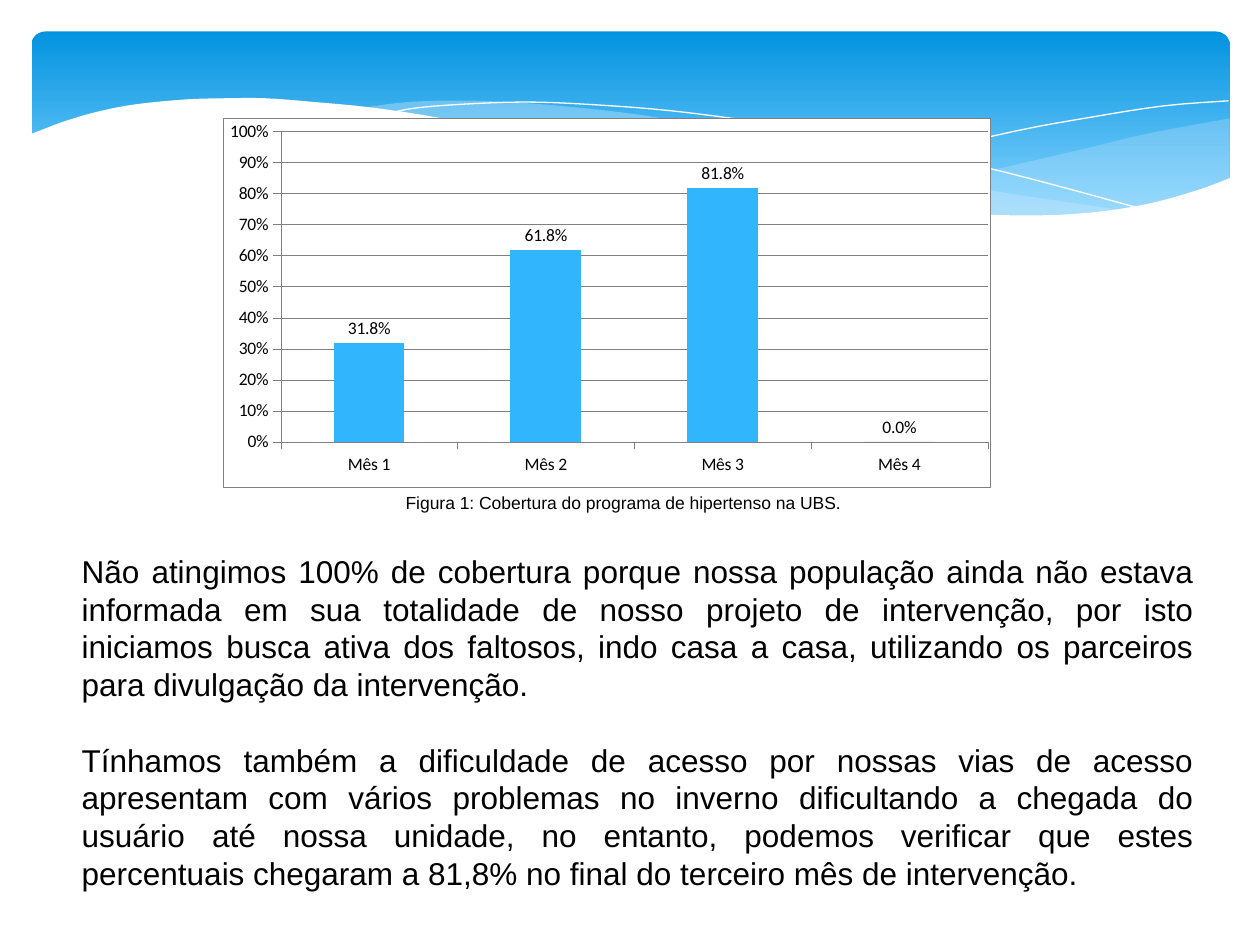
from lxml.etree import SubElement
from pptx import Presentation
from pptx.chart.data import CategoryChartData
from pptx.dml.color import RGBColor
from pptx.enum.chart import XL_CHART_TYPE, XL_LABEL_POSITION, XL_TICK_MARK
from pptx.enum.shapes import MSO_SHAPE
from pptx.enum.text import MSO_ANCHOR, PP_ALIGN
from pptx.oxml import parse_xml
from pptx.oxml.ns import nsdecls, qn
from pptx.util import Inches, Pt

WHITE, BLACK, GRAY, PALE = "FFFFFF", "000000", "808080", "C6E7FC"

RIGHT_WAVE = [
    [(9.76, 0.94), (9.48, 0.99), (9.06, 1.07), (8.61, 1.18), (8.05, 1.31),
     (7.53, 1.43), (7.06, 1.52), (6.61, 1.6)],
    [(6.61, 1.6), (7.05, 1.65), (7.45, 1.69), (7.81, 1.72), (8.24, 1.72),
     (8.63, 1.7), (8.97, 1.65), (9.35, 1.56), (9.63, 1.47), (9.76, 1.41)],
]
MIDDLE_WAVE = [
    [(8.93, 1.67), (8.37, 1.59), (7.75, 1.49), (7.06, 1.34), (6.29, 1.16),
     (5.69, 1.02), (5.14, 0.92), (4.65, 0.86), (4.2, 0.82), (3.8, 0.8),
     (3.44, 0.8), (3.13, 0.82), (2.86, 0.86)],
    [(2.86, 0.86), (3.42, 0.94), (4.04, 1.06), (4.49, 1.16), (5.3, 1.35),
     (6.01, 1.5), (6.65, 1.61), (7.22, 1.68), (7.73, 1.72), (8.18, 1.73),
     (8.57, 1.71), (8.93, 1.67)],
]
LONG_LINE = [
    [(3.09, 0.9), (3.28, 0.86), (3.63, 0.83), (4.16, 0.81), (4.69, 0.83),
     (5.33, 0.88), (6.08, 0.98), (6.95, 1.14), (7.95, 1.36), (9.07, 1.66)],
]
SHORT_LINE = [
    [(6.13, 1.51), (6.53, 1.41), (7.2, 1.24), (8.06, 1.04), (8.66, 0.93),
     (9.24, 0.84), (9.75, 0.8)],
]
WHITE_WAVE = [
    [(9.77, 1.41), (9.5, 1.51), (9.1, 1.62), (8.63, 1.69), (8.09, 1.71),
     (7.44, 1.68), (6.68, 1.6), (6.03, 1.49), (5.29, 1.33), (4.47, 1.14),
     (3.91, 1.02), (3.4, 0.92), (2.92, 0.85), (2.5, 0.81), (2.11, 0.78),
     (1.77, 0.78), (1.46, 0.79), (1.06, 0.83), (0.76, 0.89), (0.52, 0.96),
     (0.36, 1.02), (0.23, 1.07)],
    [(0.23, 2.24), (9.77, 2.24)],
]

CAPTION = "Figura 1: Cobertura do programa de hipertenso na UBS."
BODY = [
    "Não atingimos 100% de cobertura porque nossa população ainda não estava "
    "informada em sua totalidade de nosso projeto de intervenção, por isto "
    "iniciamos busca ativa dos faltosos, indo casa a casa, utilizando os "
    "parceiros para divulgação da intervenção.",
    "Tínhamos também a dificuldade de acesso por nossas vias de acesso "
    "apresentam com vários problemas no inverno dificultando a chegada do "
    "usuário até nossa unidade, no entanto, podemos verificar que estes "
    "percentuais chegaram a 81,8% no final do terceiro mês de intervenção.",
]


def rgb(value):
    return RGBColor.from_string(value)


def smooth(points, steps=4):
    if len(points) < 3:
        return points
    ends = [points[0], *points, points[-1]]
    curve = [points[0]]
    for a, b, c, d in zip(ends, ends[1:], ends[2:], ends[3:]):
        for i in range(1, steps + 1):
            t = i / steps
            curve.append(tuple(
                (2 * q + (r - p) * t + (2 * p - 5 * q + 4 * r - s) * t ** 2
                 + (3 * q - p - 3 * r + s) * t ** 3) / 2
                for p, q, r, s in zip(a, b, c, d)))
    return curve


def write(p, text, size=10, color=BLACK, font="Arial", align=PP_ALIGN.CENTER,
          indent=0, before=0):
    p.alignment = align
    p.space_before = Pt(before)
    p._p.get_or_add_pPr().set("indent", str(Inches(indent)))
    r = p.add_run()
    r.text = text
    r.font.size, r.font.name = Pt(size), font
    r.font.color.rgb = rgb(color)


def area_format(border=None):
    line = (f'<a:ln w="{Pt(0.25)}"><a:solidFill><a:srgbClr val="{border}"/></a:solidFill></a:ln>'
            if border else "<a:ln><a:noFill/></a:ln>")
    return parse_xml(f'<c:spPr {nsdecls("c", "a")}><a:solidFill><a:srgbClr val="{WHITE}"/>'
                     f'</a:solidFill>{line}</c:spPr>')


class SlideBuilder:
    def __init__(self, slide, font="Calibri", accent="31B6FD"):
        self.s, self.font, self.accent = slide, font, accent

    def band(self, x, y, w, h):
        sp = self.s.shapes.add_shape(MSO_SHAPE.ROUNDED_RECTANGLE, *map(Inches, (x, y, w, h)))
        sp.adjustments[0] = 0.07
        sp.shadow.inherit = False
        sp.line.fill.background()
        sp.fill.gradient()
        sp.fill.gradient_angle = 270
        for stop, position, color in zip(sp.fill.gradient_stops, (0, 0.9), ("0293E0", "83D3FE")):
            stop.position = position
            stop.color.rgb = rgb(color)

    def wave(self, curves, fill=None, alpha=100):
        points = [(Inches(x), Inches(y)) for curve in curves for x, y in smooth(curve)]
        builder = self.s.shapes.build_freeform(*points[0])
        builder.add_line_segments(points[1:], close=fill is not None)
        sp = builder.convert_to_shape()
        sp.shadow.inherit = False
        if fill is None:
            sp.fill.background()
            sp.line.color.rgb = rgb(WHITE)
            sp.line.width = Pt(0)
            return
        sp.fill.solid()
        sp.fill.fore_color.rgb = rgb(fill)
        sp.line.fill.background()
        if alpha < 100:
            color = sp._element.spPr.find(qn("a:solidFill"))[0]
            SubElement(color, qn("a:alpha")).set("val", str(alpha * 1000))

    def text(self, x, y, w, h, paragraphs, anchor=MSO_ANCHOR.TOP, gap=0, **fmt):
        tf = self.s.shapes.add_textbox(*map(Inches, (x, y, w, h))).text_frame
        tf.word_wrap = True
        tf.vertical_anchor = anchor
        for i, text in enumerate(paragraphs):
            p = tf.add_paragraph() if i else tf.paragraphs[0]
            write(p, text, before=gap if i else 0, **fmt)

    def axis(self, axis):
        axis.major_tick_mark = XL_TICK_MARK.OUTSIDE
        axis.minor_tick_mark = XL_TICK_MARK.NONE
        self.hairline(axis.format.line)

    def hairline(self, line):
        line.color.rgb = rgb(GRAY)
        line.width = Pt(0.25)

    def columns(self, x, y, w, h, categories, values):
        data = CategoryChartData(number_format="0.0%")
        data.categories = categories
        data.add_series("Series 1", values)
        chart = self.s.shapes.add_chart(
            XL_CHART_TYPE.COLUMN_CLUSTERED, *map(Inches, (x, y, w, h)), data).chart
        chart.has_legend = chart.has_title = False
        chart.font.size, chart.font.name = Pt(10), self.font
        chart.font.color.rgb = rgb(BLACK)
        self.axis(chart.category_axis)
        axis = chart.value_axis
        self.axis(axis)
        axis.minimum_scale, axis.maximum_scale, axis.major_unit = 0, 1, 0.1
        axis.tick_labels.number_format = "0%"
        axis.tick_labels.number_format_is_linked = False
        self.hairline(axis.major_gridlines.format.line)
        plot = chart.plots[0]
        plot.gap_width, plot.vary_by_categories = 150, False
        fill = plot.series[0].format.fill
        fill.solid()
        fill.fore_color.rgb = rgb(self.accent)
        plot.has_data_labels = True
        labels = plot.data_labels
        labels.show_value = True
        labels.number_format, labels.number_format_is_linked = "0.0%", False
        labels.position = XL_LABEL_POSITION.OUTSIDE_END
        self.plot_area(chart, x=0.075, y=0.035, w=0.922, h=0.842)

    def plot_area(self, chart, **box):
        root = chart._chartSpace.find(qn("c:chart"))
        root.addnext(area_format(GRAY))
        area = root.find(qn("c:plotArea"))
        for old in area.findall(qn("c:layout")):
            area.remove(old)
        modes = '<c:xMode val="edge"/><c:yMode val="edge"/>'
        sizes = "".join(f'<c:{key} val="{value}"/>' for key, value in box.items())
        area.insert(0, parse_xml(
            f'<c:layout {nsdecls("c")}><c:manualLayout><c:layoutTarget val="inner"/>'
            f'{modes}{sizes}</c:manualLayout></c:layout>'))
        area.append(area_format())


def main():
    prs = Presentation()
    prs.slide_width, prs.slide_height = Inches(10), Inches(7.5)
    b = SlideBuilder(prs.slides.add_slide(prs.slide_layouts[6]))
    b.band(0.25, 0.25, 9.51, 1.56)
    b.wave(RIGHT_WAVE, PALE, 29)
    b.wave(MIDDLE_WAVE, PALE, 40)
    b.wave(LONG_LINE)
    b.wave(SHORT_LINE)
    b.wave(WHITE_WAVE, WHITE)
    b.columns(1.77, 0.94, 6.09, 2.93, [f"Mês {n}" for n in range(1, 5)],
              [0.318, 0.618, 0.818, 0])
    b.text(-0.35, 3.86, 10, 0.26, [CAPTION], anchor=MSO_ANCHOR.MIDDLE, indent=0.59)
    b.text(0.55, 4.33, 9.02, 2.83, BODY, gap=21.5, size=18, align=PP_ALIGN.JUSTIFY)
    prs.save("out.pptx")


if __name__ == "__main__":
    main()
